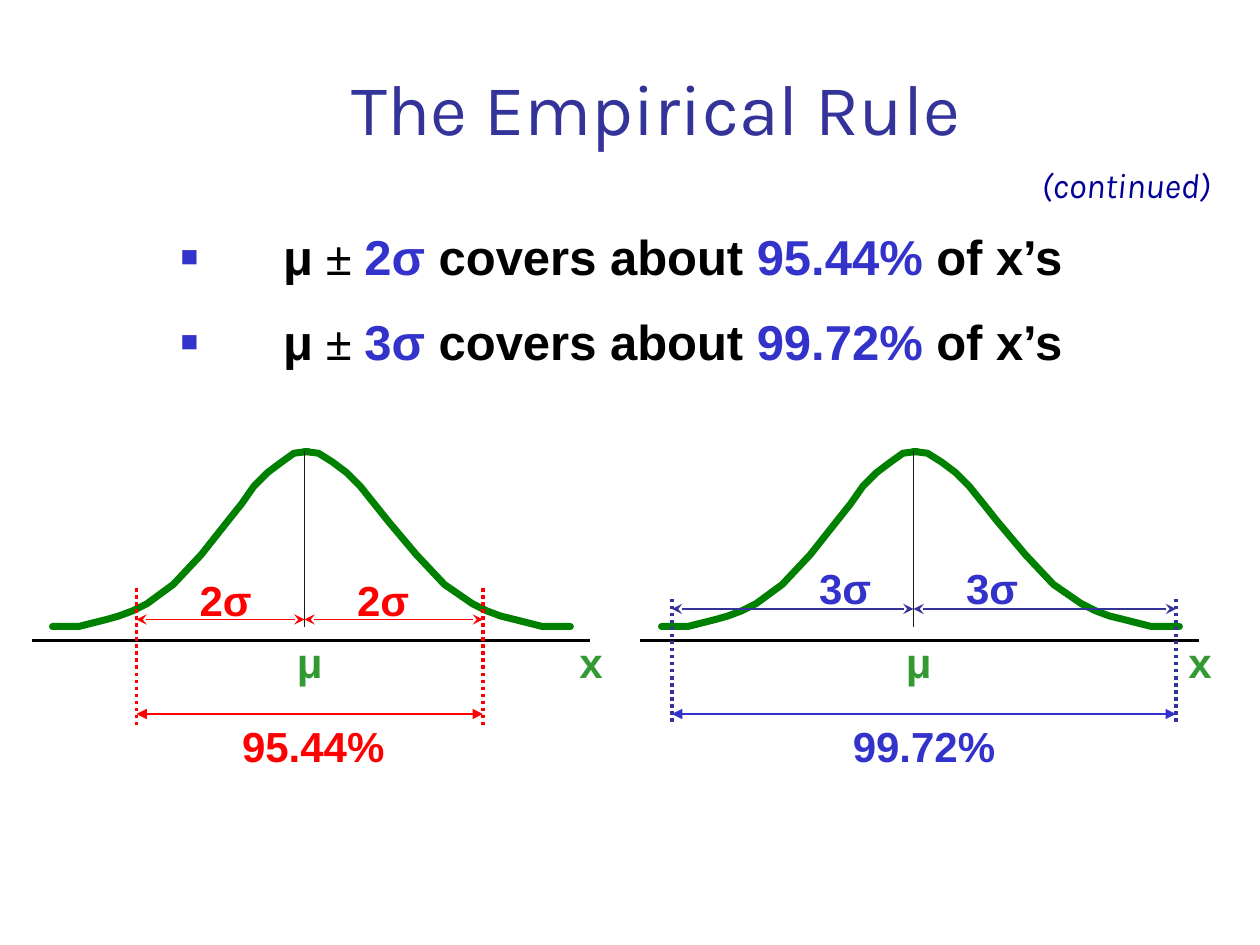
"""Build the Empirical Rule slide with two normal curves and their sigma ranges."""
from lxml import etree
from pptx import Presentation
from pptx.dml.color import RGBColor
from pptx.enum import dml, shapes, text
from pptx.oxml import ns
from pptx.util import Pt

TITLE = "The Empirical Rule"
CONTINUED = "(continued)"
RULES = [("2σ ", "95.44%"), ("3σ ", "99.72%")]

BLACK, BLUE, GREEN, RED, NAVY = "000000", "3333CC", "339933", "FF0000", "333399"
TITLE_FONT = dict(name="Karla", size=Pt(41), color=NAVY)
CONTINUED_FONT = dict(name="Karla", size=Pt(20), italic=True, color="000099")
RULE_FONT = dict(name="Arial", size=Pt(28), bold=True)
LABEL_FONT = dict(name="Arial", size=Pt(24), bold=True)

PANELS = [
    dict(left=0, sigma="2σ", share="95.44%", span=(78, 276), share_x=179,
         dots_top=336, arrow_y=354, sigma_top=325, sigma_xs=(129, 219),
         line=RED, ink=RED),
    dict(left=348, sigma="3σ", share="99.72%", span=(36, 324), share_x=180,
         dots_top=342, arrow_y=348, sigma_top=318, sigma_xs=(135, 219),
         line=NAVY, ink=BLUE),
]
MEAN, PEAK, FOOT, AXIS, TOTAL_Y, DOTS_BOTTOM = 174, 258, 358.5, 366, 408, 414
CURVE_STEPS = 19
CURVE = [(0, 358.5), (2, 358), (3, 356.5), (4, 354), (5, 352), (6, 349), (7, 345),
         (9, 333.5), (11, 317), (13, 297.5), (14, 287.5), (15, 278), (16, 269.5),
         (17, 263.5), (18, 259), (19, 258)]
CURVE_HALVES = [(326, 174), (30, 176)]


def rgb(value):
    return RGBColor.from_string(value)


def add_run(paragraph, words, style):
    run = paragraph.add_run()
    run.text = words
    for key, value in style.items():
        if key == "color":
            run.font.color.rgb = rgb(value)
        else:
            setattr(run.font, key, value)


def place(shape, left, top, width, height):
    for key, value in dict(left=left, top=top, width=width, height=height).items():
        setattr(shape, key, Pt(value))


def add_child(parent, tag, **attributes):
    return etree.SubElement(parent, ns.qn(tag), attributes)


def add_label(slide, words, center, top, width, style, align=text.PP_ALIGN.CENTER, wrap=False):
    box = slide.shapes.add_textbox(Pt(center - width / 2), Pt(top), Pt(width), Pt(36))
    box.text_frame.word_wrap = wrap
    paragraph = box.text_frame.paragraphs[0]
    paragraph.alignment = align
    add_run(paragraph, words, style)


def add_line(slide, x1, y1, x2, y2, color, width, dash=None, arrow=None):
    line = slide.shapes.add_connector(
        shapes.MSO_CONNECTOR.STRAIGHT, Pt(x1), Pt(y1), Pt(x2), Pt(y2))
    line.line.color.rgb = rgb(color)
    line.line.width = Pt(width)
    if dash:
        line.line.dash_style = dash
    properties = line._element.spPr
    if arrow:
        outline = properties.find(ns.qn("a:ln"))
        add_child(outline, "a:headEnd", type=arrow)
        add_child(outline, "a:tailEnd", type=arrow)
    add_child(properties, "a:effectLst")


def add_curve_half(slide, left, tail, peak):
    points = [(left + tail + (peak - tail) * step / CURVE_STEPS, y) for step, y in CURVE]
    builder = slide.shapes.build_freeform(*points[0], scale=Pt(1))
    builder.add_line_segments(points[1:], close=False)
    half = builder.convert_to_shape()
    half.shadow.inherit = False
    half.fill.background()
    half.line.color.rgb = rgb("008000")
    half.line.width = Pt(4)
    outline = half._element.spPr.find(ns.qn("a:ln"))
    outline.set("cap", "rnd")
    add_child(outline, "a:round")


def add_panel(slide, panel):
    left, line = panel["left"], panel["line"]
    mean = left + MEAN
    low, high = (left + x for x in panel["span"])
    for tail, peak in CURVE_HALVES:
        add_curve_half(slide, left, tail, peak)
    add_line(slide, mean, PEAK, mean, FOOT, "1C1C1C", 1)
    add_line(slide, left + 18, AXIS, left + 337, AXIS, BLACK, 1.5)
    for x in (low, high):
        add_line(slide, x, panel["dots_top"], x, DOTS_BOTTOM, line, 2,
                 dash=dml.MSO_LINE.ROUND_DOT)
        add_line(slide, min(x, mean), panel["arrow_y"], max(x, mean), panel["arrow_y"],
                 line, 1, arrow="stealth")
    add_line(slide, low, TOTAL_Y, high, TOTAL_Y, panel["ink"], 1.5, arrow="triangle")

    labels = [("x", 337.5, 360, 27, GREEN), ("μ", 177, 360, 30, GREEN),
              (panel["share"], panel["share_x"], TOTAL_Y, 96, panel["ink"])]
    labels += [(panel["sigma"], x, panel["sigma_top"], 44, panel["ink"])
               for x in panel["sigma_xs"]]
    for words, center, top, width, color in labels:
        add_label(slide, words, left + center, top, width, dict(LABEL_FONT, color=color))


def fill_title(title):
    place(title, 84, 30, 582, 60)
    title.text_frame.auto_size = text.MSO_AUTO_SIZE.NONE
    title.text_frame.vertical_anchor = text.MSO_ANCHOR.BOTTOM
    heading = title.text_frame.paragraphs[0]
    heading.alignment = text.PP_ALIGN.CENTER
    heading.line_spacing = 0.9
    add_run(heading, TITLE, TITLE_FONT)


def fill_rules(body):
    place(body, 96, 126, 546, 102)
    frame = body.text_frame
    frame.auto_size = text.MSO_AUTO_SIZE.NONE
    for index, (spread, share) in enumerate(RULES):
        rule = frame.add_paragraph() if index else frame.paragraphs[0]
        properties = rule._p.get_or_add_pPr()
        properties.set("marL", str(Pt(58.6)))
        properties.set("indent", str(-Pt(58.6)))
        add_child(add_child(properties, "a:buClr"), "a:srgbClr", val=BLUE)
        add_child(properties, "a:buSzPct", val="60000")
        add_child(properties, "a:buFont", typeface="Arial")
        add_child(properties, "a:buChar", char="■")
        rule.space_before = Pt(15 if index else 0)
        for words, changes in [
            ("μ", dict(color=BLACK)),
            (" ± ", dict(color=BLACK, name="Times New Roman")),
            (spread, dict(color=BLUE)),
            ("covers about ", dict(color=BLACK)),
            (share, dict(color=BLUE)),
            (" of x’s", dict(color=BLACK)),
        ]:
            add_run(rule, words, {**RULE_FONT, **changes})


def main():
    deck = Presentation()
    deck.slide_width, deck.slide_height = Pt(720), Pt(540)
    slide = deck.slides.add_slide(deck.slide_layouts[1])
    fill_title(slide.shapes.title)
    fill_rules(slide.placeholders[1])
    for panel in PANELS:
        add_panel(slide, panel)
    add_label(slide, CONTINUED, 648, 90, 120, CONTINUED_FONT, text.PP_ALIGN.LEFT, True)
    deck.save("out.pptx")


if __name__ == "__main__":
    main()
